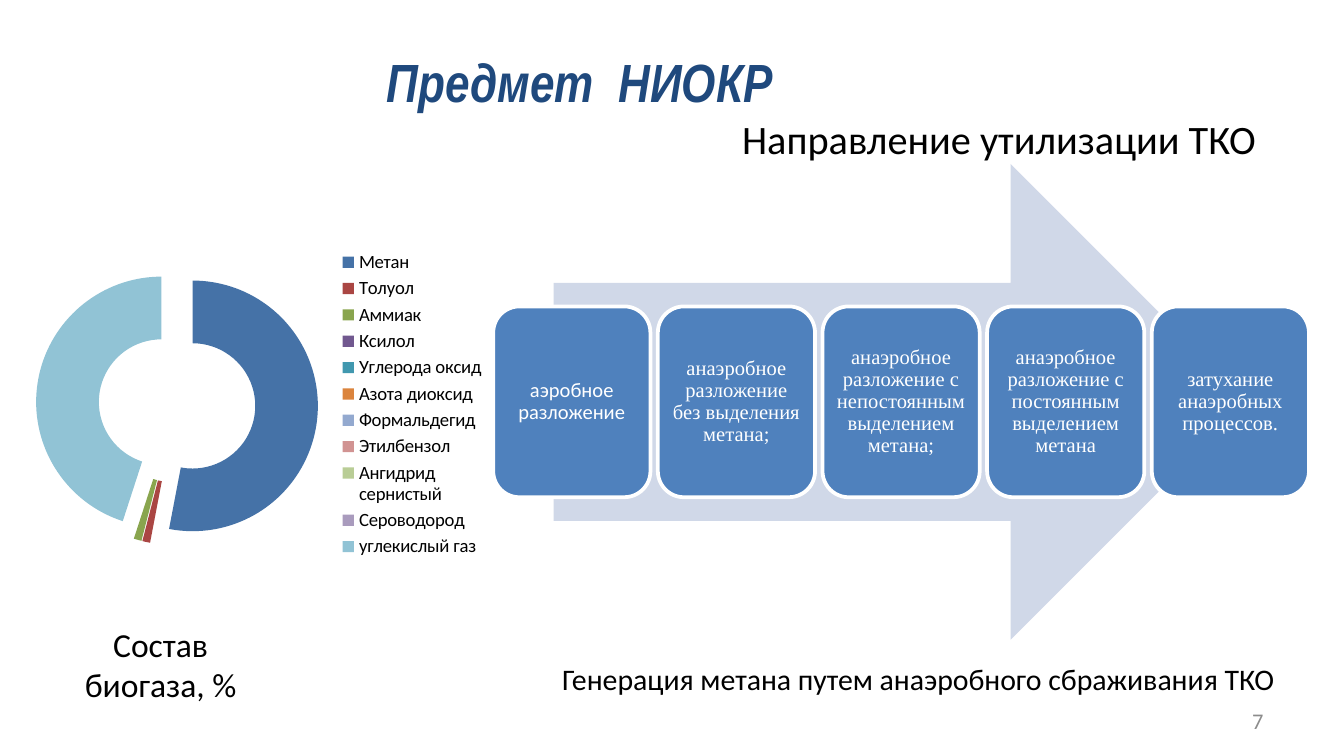
from lxml.etree import SubElement
from pptx import Presentation
from pptx.chart.data import CategoryChartData
from pptx.dml.color import RGBColor
from pptx.enum.chart import XL_CHART_TYPE, XL_LEGEND_POSITION
from pptx.enum.shapes import MSO_SHAPE
from pptx.enum.text import MSO_ANCHOR, PP_ALIGN
from pptx.oxml.ns import qn
from pptx.util import Inches, Pt

WIDTH = 10
HEIGHT = WIDTH * 9 / 16
BLACK, WHITE, BLUE = "000000", "FFFFFF", "4F81BD"

GASES = [
    ("Метан", 53, "4572A7"),
    ("Толуол", 1, "AA4643"),
    ("Аммиак", 1, "89A54E"),
    ("Ксилол", 0, "71588F"),
    ("Углерода оксид", 0, "4198AF"),
    ("Азота диоксид", 0, "DB843D"),
    ("Формальдегид", 0, "93A9CF"),
    ("Этилбензол", 0, "D19392"),
    ("Ангидрид сернистый", 0, "B9CD96"),
    ("Сероводород", 0, "A99BBD"),
    ("углекислый газ", 45, "91C3D5"),
]

STAGES = [
    ("аэробное разложение", "Calibri"),
    ("анаэробное разложение без выделения метана;", "Times New Roman"),
    ("анаэробное разложение с непостоянным выделением метана;", "Times New Roman"),
    ("анаэробное разложение с постоянным выделением метана", "Times New Roman"),
    ("затухание анаэробных процессов.", "Times New Roman"),
]

CENTER, RIGHT = PP_ALIGN.CENTER, PP_ALIGN.RIGHT
TOP, MIDDLE = MSO_ANCHOR.TOP, MSO_ANCHOR.MIDDLE
LABELS = [
    ("Состав биогаза, %", (0.4, 4.59, 1.59, 0.71), 18, BLACK, CENTER, TOP),
    ("Направление утилизации ТКО", (5.13, 0.81, 4.61, 0.44), 21.6, BLACK, CENTER, MIDDLE),
    ("Генерация метана путем анаэробного сбраживания ТКО ", (3.72, 4.87, 6.28, 0.37), 16, BLACK, CENTER, TOP),
    ("7", (7.17, 5.21, 2.33, 0.3), 12, "8C8C8C", RIGHT, MIDDLE),
]

STAGE_LEFT, STAGE_TOP, STAGE_RIGHT = 3.67, 2.28, 9.74
STAGE_SIZE = (1.17, 1.42)
STAGE_STEP = (STAGE_RIGHT - STAGE_LEFT - STAGE_SIZE[0]) / (len(STAGES) - 1)


def color(value):
    return RGBColor.from_string(value)


def inches(area):
    return [Inches(length) for length in area]


def write(box, text, size, font, tint, align=CENTER, anchor=MIDDLE):
    frame = box.text_frame
    frame.text = text
    frame.word_wrap = True
    frame.vertical_anchor = anchor
    para = frame.paragraphs[0]
    para.alignment = align
    span = para.runs[0]
    span.font.size = Pt(size)
    span.font.name = font
    span.font.color.rgb = color(tint)
    return para


def add_shape(page, kind, area, fill):
    shape = page.shapes.add_shape(kind, *inches(area))
    shape.shadow.inherit = False
    shape.fill.solid()
    shape.fill.fore_color.rgb = color(fill)
    shape.line.fill.background()
    return shape


def add_gas_chart(page):
    data = CategoryChartData()
    data.categories = [name for name, share, tint in GASES]
    data.add_series("Series 1", [share for name, share, tint in GASES])
    area = inches((0.13, 0.81, 3.58, 4.4))
    chart = page.shapes.add_chart(XL_CHART_TYPE.DOUGHNUT, *area, data).chart
    chart.has_title = False
    chart.font.size = Pt(10)
    chart.font.name = "Calibri"
    chart.font.color.rgb = color(BLACK)
    chart.has_legend = True
    chart.legend.position = XL_LEGEND_POSITION.RIGHT
    chart.legend.include_in_layout = False
    chart.plots[0].vary_by_categories = True
    series = chart.plots[0].series[0]
    for index, (name, share, tint) in enumerate(GASES):
        fill = series.points[index].format.fill
        fill.solid()
        fill.fore_color.rgb = color(tint)
    element = series._element
    explosion = SubElement(element, qn("c:explosion"), val="25")
    element.find(qn("c:tx")).addnext(explosion)


def add_stages(page):
    add_shape(page, MSO_SHAPE.RIGHT_ARROW, (4.12, 1.22, 5.17, 3.54), "D0D8E8")
    for index, (text, font) in enumerate(STAGES):
        area = (STAGE_LEFT + index * STAGE_STEP, STAGE_TOP, *STAGE_SIZE)
        box = add_shape(page, MSO_SHAPE.ROUNDED_RECTANGLE, area, BLUE)
        box.line.color.rgb = color(WHITE)
        box.line.width = Pt(2)
        frame = box.text_frame
        frame.margin_left = frame.margin_right = Inches(0.05)
        frame.margin_top = frame.margin_bottom = Inches(0.05)
        para = write(box, text, 11, font, WHITE)
        para.line_spacing = 0.9


def main():
    deck = Presentation()
    deck.slide_width, deck.slide_height = inches((WIDTH, HEIGHT))
    page = deck.slides.add_slide(deck.slide_layouts[6])

    title = page.shapes.add_textbox(*inches((0, 0.38, 8.72, 0.45)))
    para = write(title, "Предмет  НИОКР ", 28.8, "Arial Narrow", "1F497D")
    para.runs[0].font.bold = True
    para.runs[0].font.italic = True

    add_gas_chart(page)
    add_stages(page)
    for text, area, size, tint, align, anchor in LABELS:
        box = page.shapes.add_textbox(*inches(area))
        write(box, text, size, "Calibri", tint, align, anchor)

    deck.save("out.pptx")


if __name__ == "__main__":
    main()
